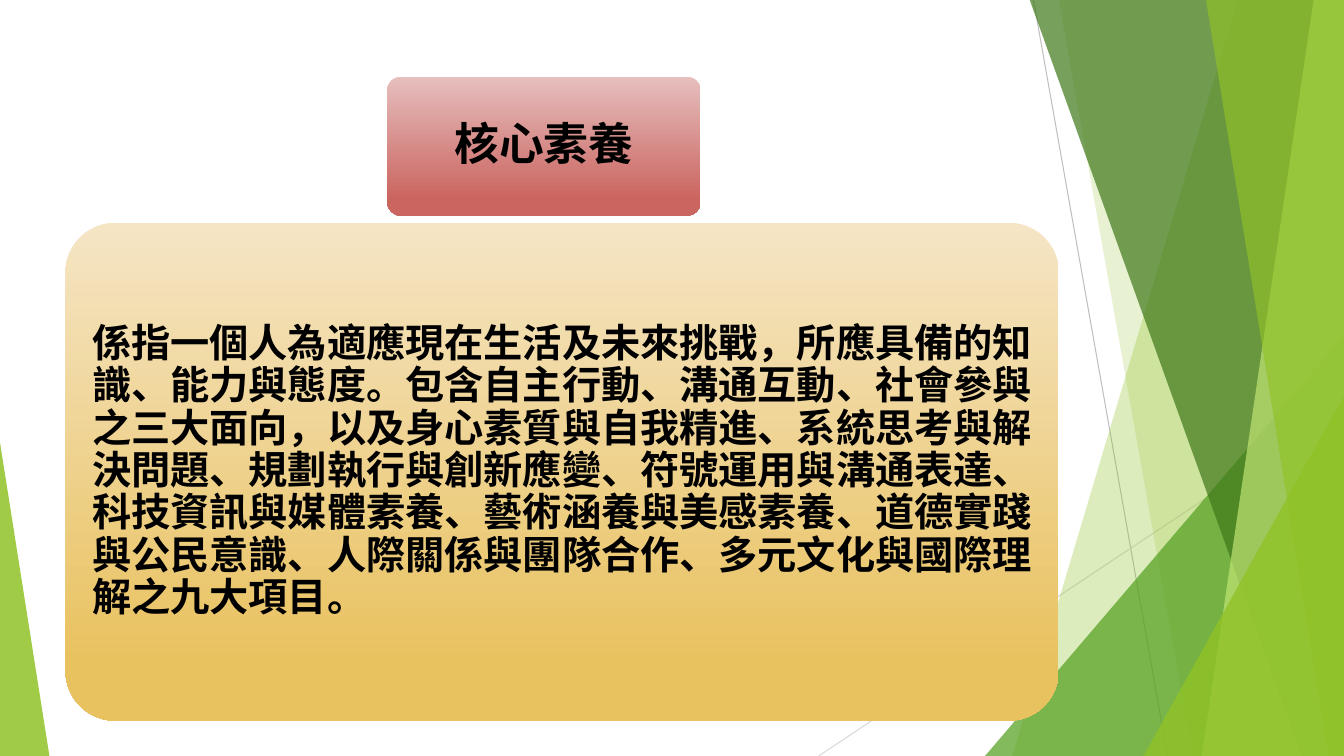
from dataclasses import dataclass

from lxml import etree
from pptx import Presentation
from pptx.dml.color import RGBColor
from pptx.dml.fill import FillFormat
from pptx.enum.shapes import MSO_CONNECTOR, MSO_SHAPE
from pptx.enum.text import MSO_ANCHOR, MSO_AUTO_SIZE, PP_ALIGN
from pptx.oxml.ns import qn
from pptx.shapes.autoshape import Shape
from pptx.slide import Slide
from pptx.util import Inches, Pt

STRAIGHT = MSO_CONNECTOR.STRAIGHT
TRIANGLE = MSO_SHAPE.ISOSCELES_TRIANGLE
ROUNDED = MSO_SHAPE.ROUNDED_RECTANGLE
MIDDLE = MSO_ANCHOR.MIDDLE
NO_AUTOFIT = MSO_AUTO_SIZE.NONE
LEFT, CENTER = PP_ALIGN.LEFT, PP_ALIGN.CENTER

WIDTH, HEIGHT = 13.33, 7.5
BAND_TOP = -0.01
FONT = "Noto Sans CJK SC"
TITLE = "核心素養"
DEFINITION = (
    "係指一個人為適應現在生活及未來挑戰，所應具備的知識、能力與態度。"
    "包含自主行動、溝通互動、社會參與之三大面向，"
    "以及身心素質與自我精進、系統思考與解決問題、規劃執行與創新應變、"
    "符號運用與溝通表達、科技資訊與媒體素養、藝術涵養與美感素養、"
    "道德實踐與公民意識、人際關係與團隊合作、多元文化與國際理解之九大項目。"
)


@dataclass
class Ray:
    start: tuple[float, float]
    end: tuple[float, float]
    color: str


@dataclass
class Band:
    top_left: float
    bottom_left: float
    color: str
    opacity: int


@dataclass
class Corner:
    left: float
    width: float
    height: float
    apex: float
    color: str
    opacity: int


@dataclass
class Card:
    left: float
    top: float
    width: float
    height: float
    top_color: str
    bottom_color: str


RAYS = [
    Ray((10.25, 0), (11.58, HEIGHT), "BFBFBF"),
    Ray((WIDTH, 4.03), (8.12, HEIGHT), "D9D9D9"),
]
FACETS = [
    Band(12.28, 10.04, "90C226", 30),
    Band(10.5, 11.83, "90C226", 20),
    Corner(9.77, 3.56, 4.17, 1, "54A021", 72),
    Band(10.21, 12.91, "3F7819", 70),
    Band(13.03, 11.92, "C0E474", 70),
    Band(11.96, 13.18, "90C226", 65),
    Corner(11.34, 1.99, 3.57, 1, "90C226", 80),
    Corner(0, 0.49, 3.11, 0, "90C226", 85),
]
DEFINITION_CARD = Card(0.65, 2.21, 9.85, 4.94, "F5E5C5", "E9C260")
TITLE_CARD = Card(3.84, 0.76, 3.11, 1.38, "E6BFBE", "CB6560")


def rgb(color: str) -> RGBColor:
    """Turn a hex string into a colour."""
    return RGBColor.from_string(color)


def set_translucent_fill(fill: FillFormat, shape: Shape, color: str, opacity: int) -> None:
    """Fill a shape with a colour at an opacity in percent."""
    fill.solid()
    fill.fore_color.rgb = rgb(color)
    color_element = shape._element.spPr.find(qn("a:solidFill"))[0]
    etree.SubElement(color_element, qn("a:alpha"), val=str(opacity * 1000))


def draw_ray(slide: Slide, ray: Ray) -> None:
    """Draw a thin background line."""
    ends = [Inches(value) for value in (*ray.start, *ray.end)]
    connector = slide.shapes.add_connector(STRAIGHT, *ends)
    connector.line.color.rgb = rgb(ray.color)
    connector.line.width = Pt(0.75)
    etree.SubElement(connector._element.spPr, qn("a:effectLst"))


def add_band(slide: Slide, band: Band) -> Shape:
    """Outline a band that reaches the right edge of the slide."""
    corners = [
        (Inches(x), Inches(y))
        for x, y in (
            (band.top_left, BAND_TOP),
            (WIDTH, BAND_TOP),
            (WIDTH, HEIGHT),
            (band.bottom_left, HEIGHT),
        )
    ]
    builder = slide.shapes.build_freeform(*corners[0])
    builder.add_line_segments(corners[1:], close=True)
    return builder.convert_to_shape()


def add_corner(slide: Slide, corner: Corner) -> Shape:
    """Add a right triangle that stands on the bottom edge."""
    shape = slide.shapes.add_shape(
        TRIANGLE,
        Inches(corner.left),
        Inches(HEIGHT - corner.height),
        Inches(corner.width),
        Inches(corner.height),
    )
    shape.adjustments[0] = corner.apex
    return shape


def draw_facet(slide: Slide, facet: Band | Corner) -> None:
    """Draw one translucent green facet."""
    shape = add_band(slide, facet) if isinstance(facet, Band) else add_corner(slide, facet)
    set_translucent_fill(shape.fill, shape, facet.color, facet.opacity)
    shape.line.fill.background()
    shape.shadow.inherit = False


def draw_card(slide: Slide, card: Card) -> Shape:
    """Draw a rounded card with a vertical gradient."""
    box = [Inches(value) for value in (card.left, card.top, card.width, card.height)]
    shape = slide.shapes.add_shape(ROUNDED, *box)
    shape.adjustments[0] = 0.1
    shape.fill.gradient()
    shape.fill.gradient_angle = 270
    stops = zip(shape.fill.gradient_stops, (card.top_color, card.bottom_color), (0, 0.88))
    for stop, color, position in stops:
        stop.color.rgb = rgb(color)
        stop.position = position
    shape.line.fill.background()
    shape.shadow.inherit = False
    return shape


def write_text(shape: Shape, text: str, size: int, alignment: PP_ALIGN, inset: float) -> None:
    """Write one bold black paragraph, centred vertically."""
    frame = shape.text_frame
    frame.text = text
    frame.word_wrap = True
    frame.auto_size = NO_AUTOFIT
    frame.vertical_anchor = MIDDLE
    frame.margin_left = frame.margin_right = Inches(inset)
    frame.margin_top = frame.margin_bottom = Inches(inset)
    paragraph = frame.paragraphs[0]
    paragraph.alignment = alignment
    paragraph.line_spacing = 0.9
    font = paragraph.font
    font.size = Pt(size)
    font.bold = True
    font.color.rgb = rgb("000000")
    font.name = FONT
    etree.SubElement(font._element, qn("a:ea"), typeface=FONT)


def place_title(slide: Slide) -> None:
    """Set the title in front of its card."""
    title = slide.shapes.title
    title.left, title.top = Inches(3.88), Inches(0.8)
    title.width, title.height = Inches(3.03), Inches(1.3)
    write_text(title, TITLE, 32, CENTER, 0.13)
    slide.shapes._spTree.append(title._element)


def main() -> None:
    """Build the slide and save it."""
    presentation = Presentation()
    presentation.slide_width = Inches(WIDTH)
    presentation.slide_height = Inches(HEIGHT)
    slide = presentation.slides.add_slide(presentation.slide_layouts[5])
    for ray in RAYS:
        draw_ray(slide, ray)
    for facet in FACETS:
        draw_facet(slide, facet)
    write_text(draw_card(slide, DEFINITION_CARD), DEFINITION, 28, LEFT, 0.12)
    draw_card(slide, TITLE_CARD)
    place_title(slide)
    presentation.save("out.pptx")


if __name__ == "__main__":
    main()
